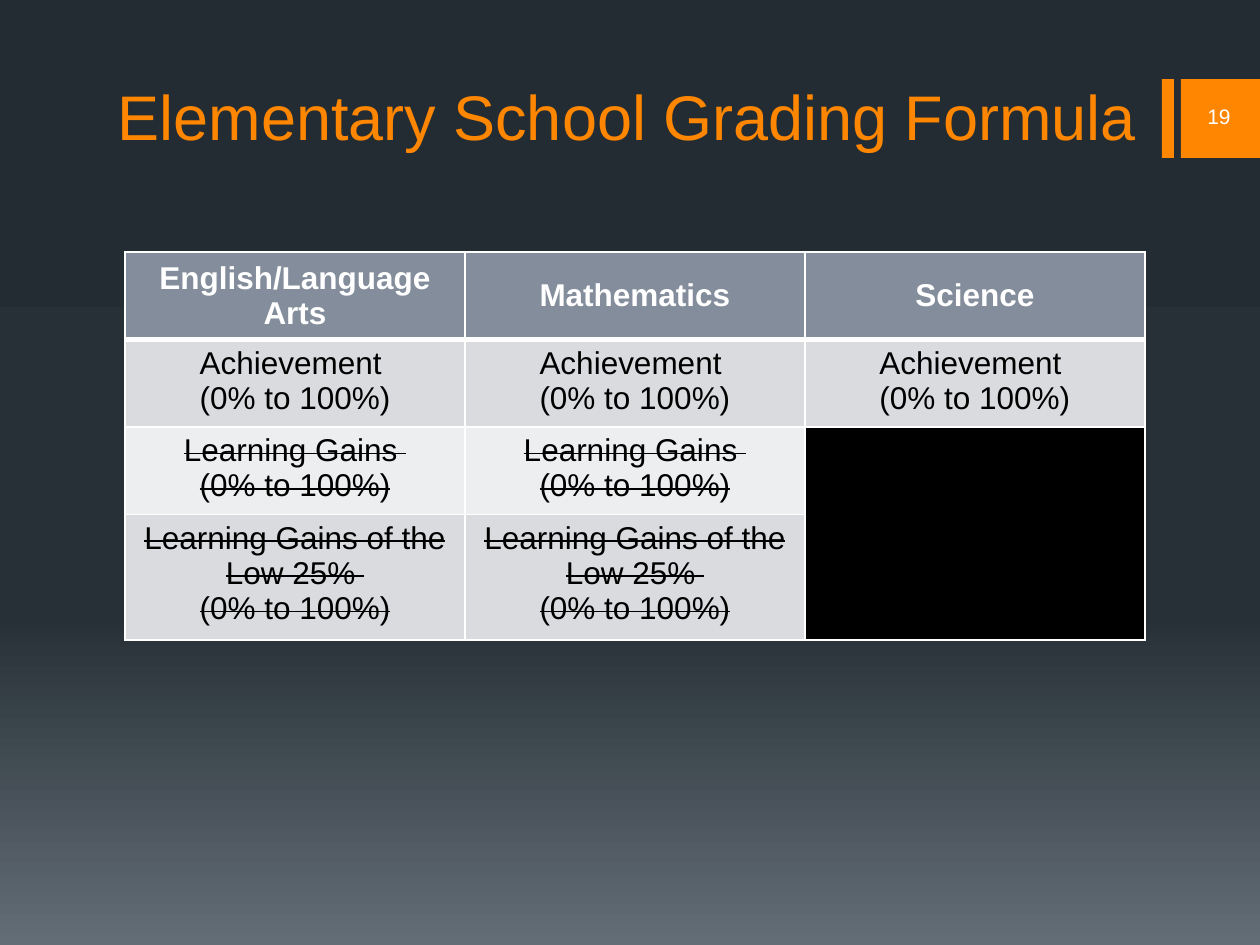
from copy import deepcopy
from dataclasses import dataclass

from lxml.etree import SubElement
from pptx import Presentation
from pptx.dml.color import RGBColor
from pptx.enum.shapes import MSO_SHAPE as Shape
from pptx.enum.text import MSO_ANCHOR as Anchor, MSO_AUTO_SIZE as AutoSize, PP_ALIGN as Align
from pptx.oxml.ns import qn
from pptx.util import Pt

EMU_PER_PX = 914400 / 126


def px(length):
    return round(length * EMU_PER_PX)


def apply(target, values):
    for name, value in values.items():
        setattr(target, name, value)


@dataclass(frozen=True)
class Theme:
    font: str = "Arial"
    accent: str = "FF8600"
    light: str = "FFFFFF"
    dark: str = "000000"
    header: str = "838D9B"
    bands: tuple = ("D9DBDE", "EDEEEF")
    backdrop: tuple = ((0, "242C33"), (0.65, "273037"), (1, "636D76"))
    title_size: int = 36
    table_size: int = 18
    number_size: int = 12
    thin: int = 1
    thick: int = 3


class SlideBuilder:
    def __init__(self, slide, theme):
        self.slide = slide
        self.theme = theme

    def background(self):
        fill = self.slide.background.fill
        fill.gradient()
        fill.gradient_angle = 270
        # The default gradient has two stops; a third goes between them
        first_stop = fill._fill._gradFill.gsLst[0]
        first_stop.addnext(deepcopy(first_stop))
        for stop, (position, color) in zip(fill.gradient_stops, self.theme.backdrop):
            stop.position = position
            stop.color.rgb = RGBColor.from_string(color)

    def lines(self, frame, texts, size, color, align, bold=False, strike=False):
        for index, text in enumerate(texts):
            paragraph = frame.add_paragraph() if index else frame.paragraphs[0]
            paragraph.alignment = align
            run = paragraph.add_run()
            run.text = text
            apply(run.font, {"name": self.theme.font, "size": Pt(size), "bold": bold})
            run.font.color.rgb = RGBColor.from_string(color)
            if strike:
                run._r.get_or_add_rPr().set("strike", "sngStrike")

    def title(self, text, left, top, width, height):
        title = self.slide.shapes.title
        apply(title, {"left": px(left), "top": px(top),
                      "width": px(width), "height": px(height)})
        apply(title.text_frame, {"vertical_anchor": Anchor.BOTTOM, "word_wrap": True,
                                 "auto_size": AutoSize.NONE})
        self.lines(title.text_frame, [text], self.theme.title_size,
                   self.theme.accent, Align.LEFT)

    def bar(self, left, top, width, height):
        bar = self.slide.shapes.add_shape(
            Shape.RECTANGLE, px(left), px(top), px(width), px(height))
        bar.shadow.inherit = False
        bar.fill.solid()
        bar.fill.fore_color.rgb = RGBColor.from_string(self.theme.accent)
        bar.line.fill.background()

    def page_number(self, text, left, top, width, height):
        box = self.slide.shapes.add_textbox(px(left), px(top), px(width), px(height))
        apply(box.text_frame, {"word_wrap": True, "vertical_anchor": Anchor.MIDDLE})
        self.lines(box.text_frame, [text], self.theme.number_size,
                   self.theme.light, Align.RIGHT)

    def table(self, left, top, column_widths, row_heights):
        table = self.slide.shapes.add_table(
            len(row_heights), len(column_widths), px(left), px(top),
            px(sum(column_widths)), px(sum(row_heights))).table
        apply(table, {"first_row": False, "horz_banding": False})
        for column, width in zip(table.columns, column_widths):
            column.width = px(width)
        for row, height in zip(table.rows, row_heights):
            row.height = px(height)
        return table

    def cell(self, cell, fill, anchor=Anchor.TOP, top=None, bottom=None):
        apply(cell, {"margin_left": px(9), "margin_right": px(9), "margin_top": px(6),
                     "margin_bottom": px(6), "vertical_anchor": anchor})
        # Borders come before the fill in the cell properties
        thin = self.theme.thin
        properties = cell._tc.get_or_add_tcPr()
        for side, width in (("L", thin), ("R", thin), ("T", top or thin), ("B", bottom or thin)):
            line = SubElement(properties, qn(f"a:ln{side}"), w=str(Pt(width)))
            SubElement(SubElement(line, qn("a:solidFill")), qn("a:srgbClr"),
                       val=self.theme.light)
        cell.fill.solid()
        cell.fill.fore_color.rgb = RGBColor.from_string(fill)


def main():
    theme = Theme()
    deck = Presentation()
    apply(deck, {"slide_width": px(1260), "slide_height": px(945)})
    builder = SlideBuilder(deck.slides.add_slide(deck.slide_layouts[5]), theme)
    builder.background()

    # Heading with the page marker at the right edge
    for left, width in ((1162, 12), (1181, 79)):
        builder.bar(left, 79, width, 79)
    builder.title("Elementary School Grading Formula", 105, 0, 1050, 159)
    builder.page_number("19", 1113, 95, 130, 42)

    # Grading components: measure, number of subjects it covers, struck out
    subjects = ("English/Language Arts", "Mathematics", "Science")
    scale = "(0% to 100%)"
    measures = (
        ("Achievement ", 3, False),
        ("Learning Gains ", 2, True),
        ("Learning Gains of the Low 25% ", 2, True),
    )
    grading = builder.table(125, 252, [340] * len(subjects), [83, 83, 83, 118])

    # Header row
    for column, subject in enumerate(subjects):
        heading = grading.cell(0, column)
        builder.cell(heading, theme.header, Anchor.MIDDLE, bottom=theme.thick)
        builder.lines(heading.text_frame, [subject], theme.table_size,
                      theme.light, Align.CENTER, bold=True)

    # Measure rows; subjects without the measure are blacked out
    for row, (measure, covered, struck) in enumerate(measures, start=1):
        for column in range(len(subjects)):
            component = grading.cell(row, column)
            applies = column < covered
            fill = theme.bands[(row - 1) % 2] if applies else theme.dark
            builder.cell(component, fill, top=theme.thick if row == 1 else None)
            if applies:
                builder.lines(component.text_frame, [measure, scale], theme.table_size,
                              theme.dark, Align.CENTER, strike=struck)
    grading.cell(2, 2).merge(grading.cell(3, 2))

    deck.save("out.pptx")


if __name__ == "__main__":
    main()
